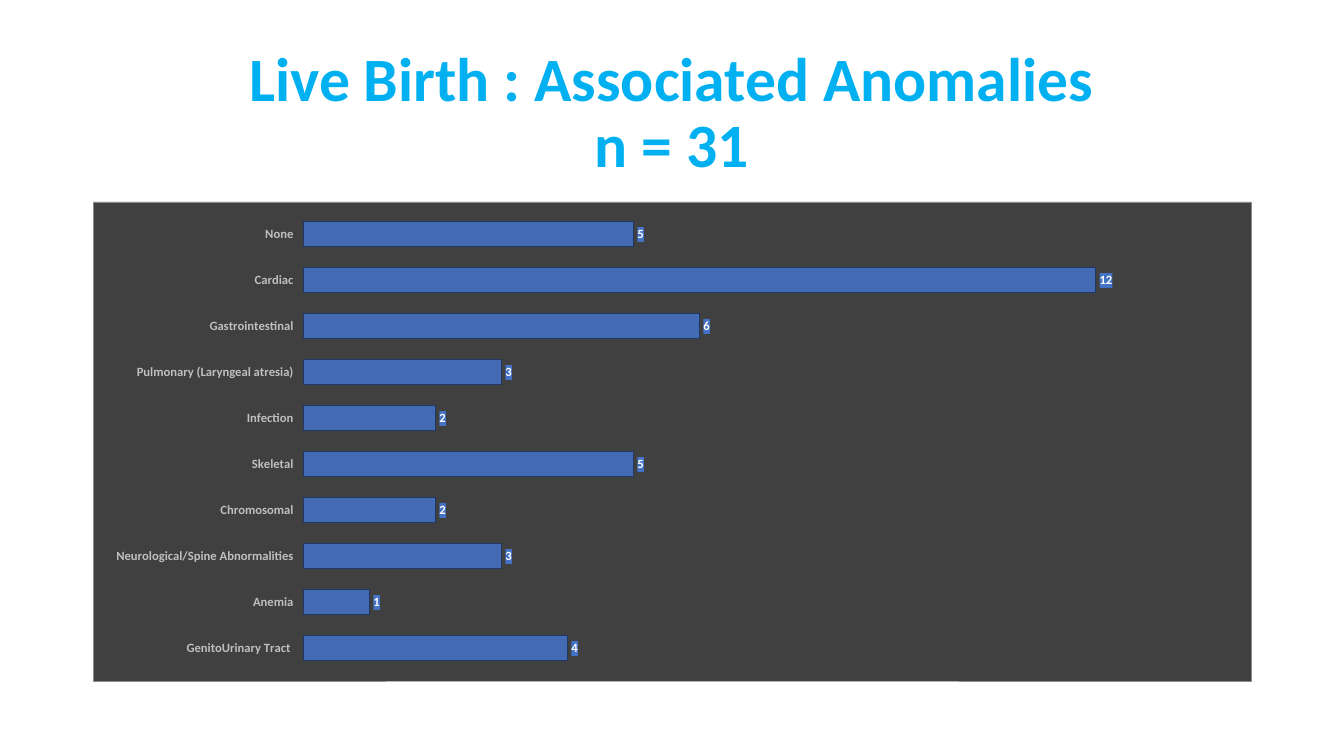
from dataclasses import dataclass

from pptx import Presentation
from pptx.chart.data import CategoryChartData
from pptx.dml.color import RGBColor
from pptx.enum.chart import XL_CHART_TYPE, XL_LABEL_POSITION, XL_TICK_LABEL_POSITION, XL_TICK_MARK
from pptx.enum.text import MSO_ANCHOR, PP_ALIGN
from pptx.oxml import parse_xml
from pptx.oxml.ns import nsdecls
from pptx.util import Inches, Pt

BAR_CLUSTERED = XL_CHART_TYPE.BAR_CLUSTERED
OUTSIDE_END = XL_LABEL_POSITION.OUTSIDE_END
LABELS_LOW = XL_TICK_LABEL_POSITION.LOW
NO_TICK = XL_TICK_MARK.NONE
MIDDLE = MSO_ANCHOR.MIDDLE
CENTER = PP_ALIGN.CENTER
TITLE_ONLY_LAYOUT = 5


@dataclass(frozen=True)
class Theme:
    font: str = "Calibri"
    title_color: str = "00B0F0"
    panel: str = "404040"
    panel_border: str = "8C8C8C"
    bar: str = "4472C4"
    bar_border: str = "203864"
    bar_opacity: int = 88
    category_text: str = "BFBFBF"
    value_text: str = "FFFFFF"
    chart_text: str = "000000"
    title_size: int = 44
    chart_size: int = 10
    label_size: int = 9


THEME = Theme()
SLIDE_WIDTH, SLIDE_HEIGHT = 13.33, 7.5
MARGIN = 0.92
CONTENT_WIDTH = SLIDE_WIDTH - 2 * MARGIN
TITLE_BOX = (MARGIN, 0.41, CONTENT_WIDTH, 1.45)
CHART_BOX = (MARGIN, 2, CONTENT_WIDTH, 4.76)

# Bars run from the bottom of the chart to the top
ANOMALIES = {
    "GenitoUrinary Tract ": 4,
    "Anemia": 1,
    "Neurological/Spine Abnormalities": 3,
    "Chromosomal": 2,
    "Skeletal": 5,
    "Infection": 2,
    "Pulmonary (Laryngeal atresia)": 3,
    "Gastrointestinal": 6,
    "Cardiac": 12,
    "None": 5,
}


def set_attributes(target, values):
    for name, value in values.items():
        setattr(target, name, value)


def format_font(font, size, color, bold=True):
    set_attributes(font, {"name": THEME.font, "size": Pt(size), "bold": bold})
    font.color.rgb = RGBColor.from_string(color)


def add_fill_before_text(parent, fill, border=None):
    """Give a chart part a fill, and a thin border if one is named."""
    solid = '<a:solidFill><a:srgbClr val="{}"/></a:solidFill>'
    line = f'<a:ln w="{Pt(0.5)}">{solid.format(border)}</a:ln>' if border else ""
    properties = parse_xml(
        f'<c:spPr {nsdecls("c", "a")}>{solid.format(fill)}{line}</c:spPr>')
    parent.xpath("./c:txPr")[0].addprevious(properties)


def add_title(slide, box, text):
    title = slide.shapes.title
    left, top, width, height = map(Inches, box)
    set_attributes(title, {"left": left, "top": top, "width": width, "height": height})
    frame = title.text_frame
    set_attributes(frame, {"text": text, "vertical_anchor": MIDDLE, "word_wrap": True})
    paragraph = frame.paragraphs[0]
    set_attributes(paragraph, {"alignment": CENTER, "line_spacing": 0.9})
    for run in paragraph.runs:
        format_font(run.font, THEME.title_size, THEME.title_color)


def format_axes(chart):
    category_axis = chart.category_axis
    set_attributes(category_axis, {
        "major_tick_mark": NO_TICK, "minor_tick_mark": NO_TICK,
        "tick_label_position": LABELS_LOW, "has_major_gridlines": False})
    category_axis.format.line.fill.background()
    format_font(category_axis.tick_labels.font, THEME.label_size, THEME.category_text)
    set_attributes(chart.value_axis, {
        "visible": False, "has_major_gridlines": False, "minimum_scale": 0})


def format_bars(chart):
    series = chart.plots[0].series[0]
    series_element = chart.element.xpath(".//c:ser")[0]

    # Slightly transparent bars with a dark outline
    fill, line = series.format.fill, series.format.line
    fill.solid()
    fill.fore_color.rgb = RGBColor.from_string(THEME.bar)
    line.color.rgb = RGBColor.from_string(THEME.bar_border)
    line.width = Pt(0.75)
    bar_color = series_element.xpath("./c:spPr/a:solidFill/a:srgbClr")[0]
    bar_color.append(parse_xml(
        f'<a:alpha {nsdecls("a")} val="{THEME.bar_opacity * 1000}"/>'))

    # Values on small filled tags
    labels = series.data_labels
    set_attributes(labels, {"show_value": True, "position": OUTSIDE_END})
    format_font(labels.font, THEME.label_size, THEME.value_text)
    add_fill_before_text(series_element.xpath("./c:dLbls")[0], THEME.bar)


def add_anomaly_chart(slide, box, values):
    data = CategoryChartData()
    data.categories = list(values)
    data.add_series("Series 1", list(values.values()))
    chart = slide.shapes.add_chart(BAR_CLUSTERED, *map(Inches, box), data).chart
    set_attributes(chart, {"has_legend": False, "has_title": False})
    format_font(chart.font, THEME.chart_size, THEME.chart_text, bold=False)
    add_fill_before_text(chart.element, THEME.panel, THEME.panel_border)
    set_attributes(chart.plots[0], {"gap_width": 84, "vary_by_categories": False})
    format_axes(chart)
    format_bars(chart)


def main():
    presentation = Presentation()
    set_attributes(presentation, {
        "slide_width": Inches(SLIDE_WIDTH), "slide_height": Inches(SLIDE_HEIGHT)})
    slide = presentation.slides.add_slide(presentation.slide_layouts[TITLE_ONLY_LAYOUT])
    add_title(slide, TITLE_BOX, "Live Birth : Associated Anomalies\vn = 31")
    add_anomaly_chart(slide, CHART_BOX, ANOMALIES)
    presentation.save("out.pptx")


if __name__ == "__main__":
    main()
